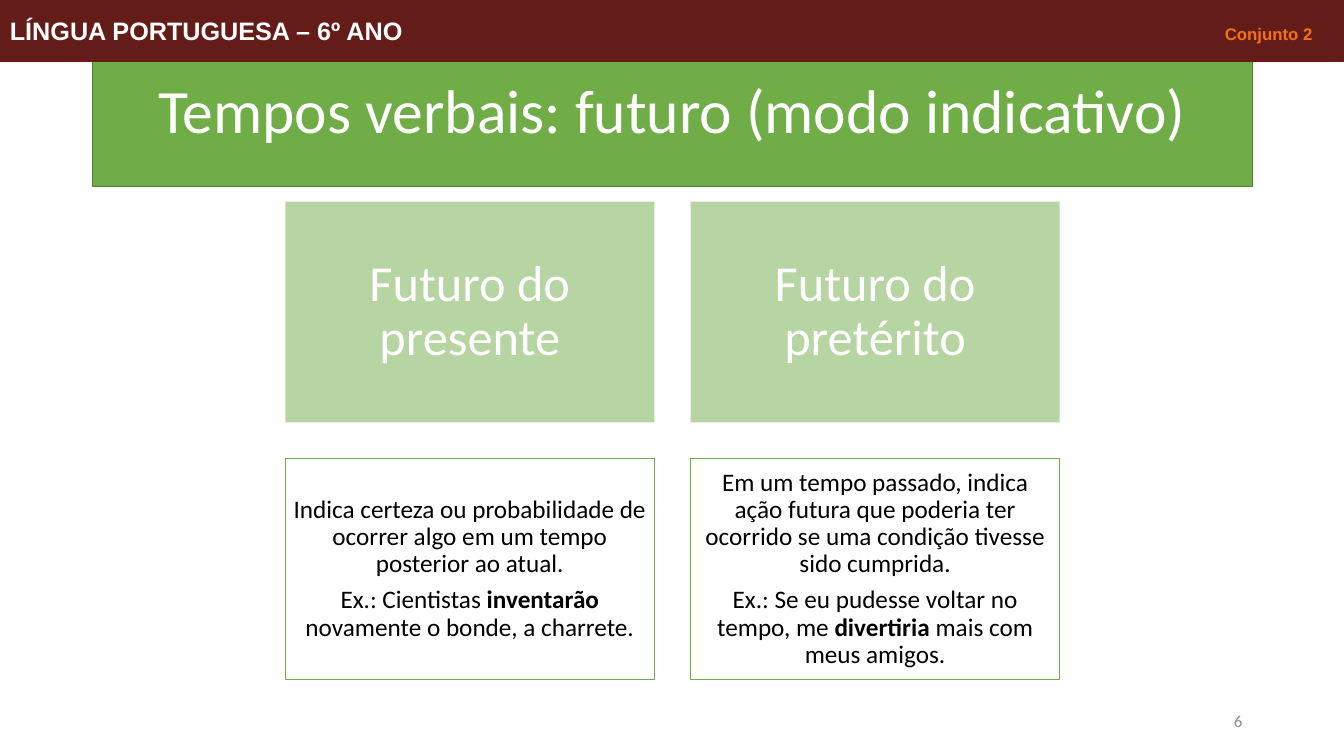
from lxml.etree import SubElement
from pptx import Presentation
from pptx.dml.color import RGBColor as RGB
from pptx.enum.shapes import MSO_SHAPE as SHAPE
from pptx.enum.text import MSO_ANCHOR as ANCHOR, MSO_AUTO_SIZE as AUTO, PP_ALIGN as ALIGN
from pptx.oxml.ns import qn
from pptx.util import Inches, Pt

COLORS = {"green": "70AD47", "dark_green": "538035", "wine": "631C18",
          "orange": "F47116", "white": "FFFFFF", "black": "000000", "gray": "8C8C8C"}
GRID = {"left": 2.83, "top": 2, "width": 3.66, "height": 2.19, "gap": 0.36}
TENSES = [
    ("Futuro do presente",
     ["Indica certeza ou probabilidade de ocorrer algo em um tempo posterior ao atual.",
      "Ex.: Cientistas *inventarão* novamente o bonde, a charrete."]),
    ("Futuro do pretérito",
     ["Em um tempo passado, indica ação futura que poderia ter ocorrido "
      "se uma condição tivesse sido cumprida.",
      "Ex.: Se eu pudesse voltar no tempo, me *divertiria* mais com meus amigos."]),
]


class Deck:
    """Hold the style and current slide, and draw each kind of element."""

    def __init__(self, width, height):
        self.prs = Presentation()
        self.prs.slide_width, self.prs.slide_height = Inches(width), Inches(height)
        self.s = self.prs.slides.add_slide(self.prs.slide_layouts[5])

    def color(self, name):
        return RGB.from_string(COLORS[name])

    def cell(self, col, row):
        w, h, gap = GRID["width"], GRID["height"], GRID["gap"]
        return GRID["left"] + col * (w + gap), GRID["top"] + row * (h + gap), w, h

    def paint(self, sp, fill, line=None, weight=1.0, alpha=None):
        sp.fill.solid()
        sp.fill.fore_color.rgb = self.color(fill)
        if alpha:
            clr = sp._element.spPr.find(qn("a:solidFill"))[0]
            SubElement(clr, qn("a:alpha"), val=str(alpha * 1000))
        if line:
            sp.line.color.rgb = self.color(line)
            sp.line.width = Pt(weight)
        else:
            sp.line.fill.background()

    def put_text(self, sp, texts, size, color, font="Calibri", align=ALIGN.CENTER,
                 inset=None, spacing=0.9, after=0):
        tf = sp.text_frame
        tf.word_wrap, tf.auto_size, tf.vertical_anchor = True, AUTO.NONE, ANCHOR.MIDDLE
        if inset is not None:
            tf.margin_left = tf.margin_right = tf.margin_top = tf.margin_bottom = Inches(inset)
        for i, text in enumerate(texts):
            p = tf.add_paragraph() if i else tf.paragraphs[0]
            p.alignment, p.line_spacing = align, spacing
            p.space_before, p.space_after = Pt(0), Pt(after)
            p.font.name, p.font.size = font, Pt(size)
            p.font.color.rgb = self.color(color)
            for j, part in enumerate(text.split("*")):
                r = p.add_run()
                r.text = part
                if j % 2:
                    r.font.bold = True
        return tf

    def box(self, x, y, w, h, fill, **style):
        sp = self.s.shapes.add_shape(SHAPE.RECTANGLE, *map(Inches, (x, y, w, h)))
        sp.shadow.inherit = False
        self.paint(sp, fill, **style)
        return sp

    def title(self, x, y, w, h, text):
        sp = self.s.shapes.title
        sp.left, sp.top, sp.width, sp.height = map(Inches, (x, y, w, h))
        self.paint(sp, "green", line="dark_green")
        self.put_text(sp, [text], 44, "white")

    def heading(self, col, text):
        sp = self.box(*self.cell(col, 0), "green", alpha=50)
        self.put_text(sp, [text], 36, "white", inset=0.15)

    def card(self, col, texts):
        sp = self.box(*self.cell(col, 1), "white", line="green")
        self.put_text(sp, texts, 18, "black", inset=0.07, after=6.3)

    def number(self, x, y, w, h, text):
        sp = self.s.shapes.add_textbox(*map(Inches, (x, y, w, h)))
        self.put_text(sp, [text], 12, "gray", align=ALIGN.RIGHT, spacing=1)

    def banner(self, height, text, tag, tab):
        sp = self.box(0, 0, 13.33, height, "wine", line="wine", weight=0.75)
        tf = self.put_text(sp, [text + "\t"], 18, "white", font="Arial",
                           align=ALIGN.LEFT, spacing=1)
        p = tf.paragraphs[0]
        p.font.bold = True
        r = p.add_run()
        r.text, r.font.size = tag, Pt(12)
        r.font.color.rgb = self.color("orange")
        pPr = p._p.get_or_add_pPr()
        tabs = pPr.makeelement(qn("a:tabLst"))
        SubElement(tabs, qn("a:tab"), pos=str(int(Inches(tab))), algn="r")
        pPr.find(qn("a:defRPr")).addprevious(tabs)


def main():
    deck = Deck(13.33, 7.5)
    deck.title(0.92, 0.4, 11.5, 1.45, "Tempos verbais: futuro (modo indicativo)")
    deck.number(9.42, 6.95, 3, 0.4, "6")
    for col, (name, texts) in enumerate(TENSES):
        deck.heading(col, name)
        deck.card(col, texts)
    deck.banner(0.61, "LÍNGUA PORTUGUESA – 6º ANO", "Conjunto 2", 12.92)
    deck.prs.save("out.pptx")


if __name__ == "__main__":
    main()
